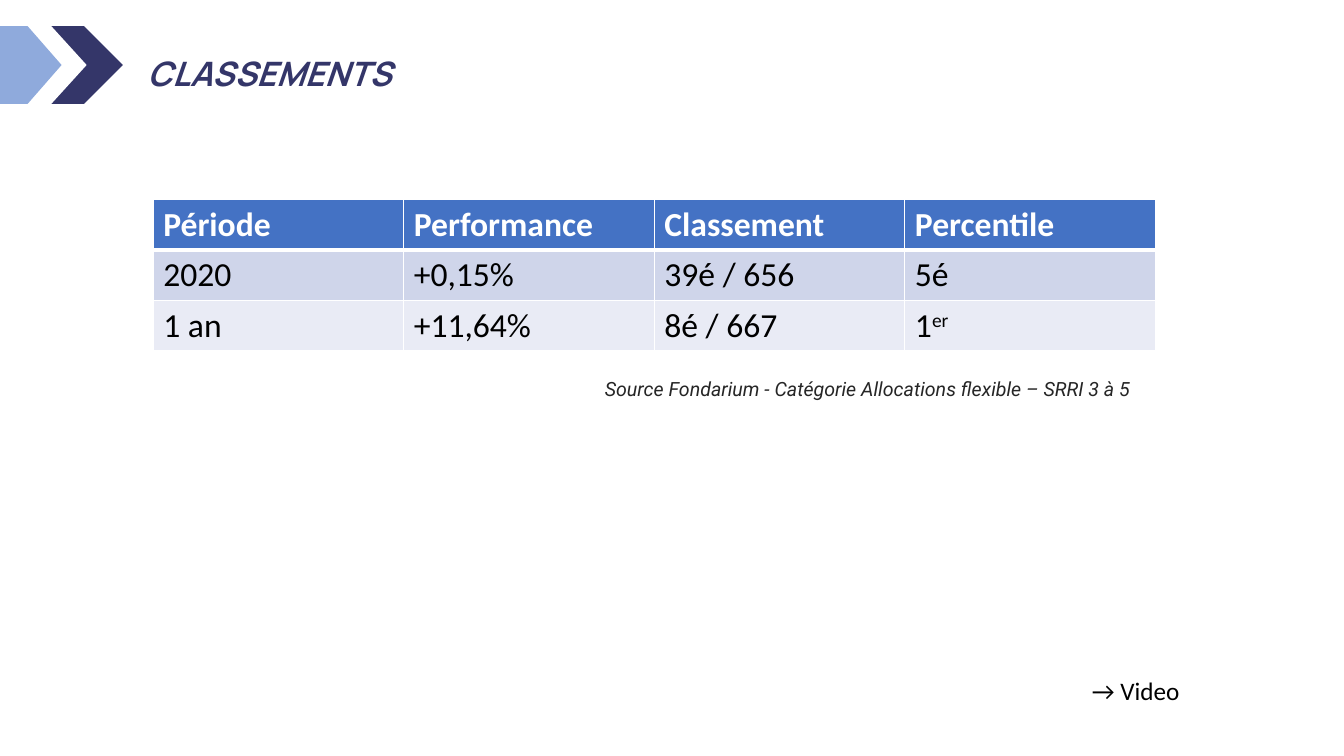
from dataclasses import dataclass

from lxml import etree
from pptx import Presentation, util as u
from pptx.dml.color import RGBColor
from pptx.enum import shapes, text
from pptx.oxml import ns


@dataclass(frozen=True)
class Theme:
    navy: str = "343669"
    sky: str = "8FAADC"
    white: str = "FFFFFF"
    black: str = "000000"
    grey: str = "262626"
    header: str = "4472C4"
    bands: tuple = ("CFD5EA", "E9EBF5")
    heading_font: str = "Manrope"
    source_font: str = "Roboto"
    body_font: str = "Calibri"
    large: int = 24
    medium: int = 18
    small: int = 14


def write(para, content, *, font, size, color, bold=False, italic=False,
          superscript=False):
    span = para.add_run()
    span.text = content
    span.font.name = font
    span.font.size = u.Pt(size)
    span.font.bold = bold
    span.font.italic = italic
    span.font.color.rgb = RGBColor.from_string(color)
    if superscript:
        span._r.get_or_add_rPr().set("baseline", "30000")


def rule_cell(cell, color, **widths):
    """Draw cell borders; widths are points keyed by side, L R T B in order."""
    properties = cell._tc.get_or_add_tcPr()
    for position, (side, width) in enumerate(widths.items()):
        line = etree.Element(ns.qn(f"a:ln{side}"), w=str(u.Pt(width)))
        fill = etree.SubElement(line, ns.qn("a:solidFill"))
        etree.SubElement(fill, ns.qn("a:srgbClr"), val=color)
        properties.insert(position, line)


class SlideBuilder:
    """Places elements by percentages of the slide's width and height."""

    def __init__(self, deck, theme):
        self.deck = deck
        self.theme = theme
        self.page = deck.slides.add_slide(deck.slide_layouts[5])

    def area(self, left, top, width, height):
        across, down = self.deck.slide_width, self.deck.slide_height
        return [round(share * length / 100) for share, length in
                zip((left, top, width, height), (across, down, across, down))]

    def arrow(self, place, color, point=0.5):
        shape = self.page.shapes.add_shape(
            shapes.MSO_SHAPE.PENTAGON, *self.area(*place))
        shape.adjustments[0] = point
        shape.shadow.inherit = False
        shape.fill.solid()
        shape.fill.fore_color.rgb = RGBColor.from_string(color)
        shape.line.fill.background()

    def title(self, place, content):
        box = self.page.shapes.title
        box.left, box.top, box.width, box.height = self.area(*place)
        frame = box.text_frame
        frame.auto_size = text.MSO_AUTO_SIZE.NONE
        frame.vertical_anchor = text.MSO_ANCHOR.MIDDLE
        para = frame.paragraphs[0]
        para.alignment = text.PP_ALIGN.LEFT
        para.line_spacing = 1.5
        write(para, content, font=self.theme.heading_font,
              size=self.theme.large, color=self.theme.navy,
              bold=True, italic=True)

    def text_box(self, place, content, wrap=True, spacing=1.0, **style):
        box = self.page.shapes.add_textbox(*self.area(*place))
        frame = box.text_frame
        frame.word_wrap = wrap
        frame.auto_size = text.MSO_AUTO_SIZE.SHAPE_TO_FIT_TEXT
        para = frame.paragraphs[0]
        para.line_spacing = spacing
        write(para, content, **style)

    def table(self, place, rows):
        """Fill a table; a tuple as cell value is text and its superscript."""
        theme = self.theme
        table = self.page.shapes.add_table(
            len(rows), len(rows[0]), *self.area(*place)).table
        table.horz_banding = False
        for r, row in enumerate(rows):
            is_header = r == 0
            fill = theme.header if is_header else theme.bands[(r - 1) % 2]
            style = dict(font=theme.body_font, size=theme.large, bold=is_header,
                         color=theme.white if is_header else theme.black)
            for c, value in enumerate(row):
                cell = table.cell(r, c)
                cell.fill.solid()
                cell.fill.fore_color.rgb = RGBColor.from_string(fill)
                rule_cell(cell, theme.white, L=1, R=1,
                          T=3 if r == 1 else 1, B=3 if is_header else 1)
                parts = value if isinstance(value, tuple) else (value,)
                for i, part in enumerate(parts):
                    write(cell.text_frame.paragraphs[0], part,
                          superscript=i > 0, **style)


def main():
    deck = Presentation()
    deck.slide_width, deck.slide_height = u.Inches(13.33), u.Inches(7.5)
    theme = Theme()
    slide = SlideBuilder(deck, theme)

    band_top, band_height = 3.47, 10.27
    for left, width, color, point in ((0, 9.15, theme.navy, 0.5),
                                      (1.2, 5.25, theme.white, 0.5),
                                      (0, 4.58, theme.sky, 0.55)):
        slide.arrow((left, band_top, width, band_height), color, point)

    slide.title((10.2, 3.2, 77.5, band_height), "CLASSEMENTS")
    slide.text_box((44.26, 47.6, 54.46, 5.6),
                   "Source Fondarium - Catégorie Allocations flexible – SRRI 3 à 5",
                   spacing=1.5, font=theme.source_font, size=theme.small,
                   color=theme.grey, italic=True)
    slide.table((11.4, 26.4, 74.57, 20), [
        ["Période", "Performance", "Classement", "Percentile"],
        ["2020", "+0,15%", "39é / 656", "5é"],
        ["1 an", "+11,64%", "8é / 667", ("1", "er")],
    ])
    slide.text_box((80.5, 88.67, 8.85, 5.33), "→ Video", wrap=False,
                   font=theme.body_font, size=theme.medium, color=theme.black)
    deck.save("out.pptx")


if __name__ == "__main__":
    main()
